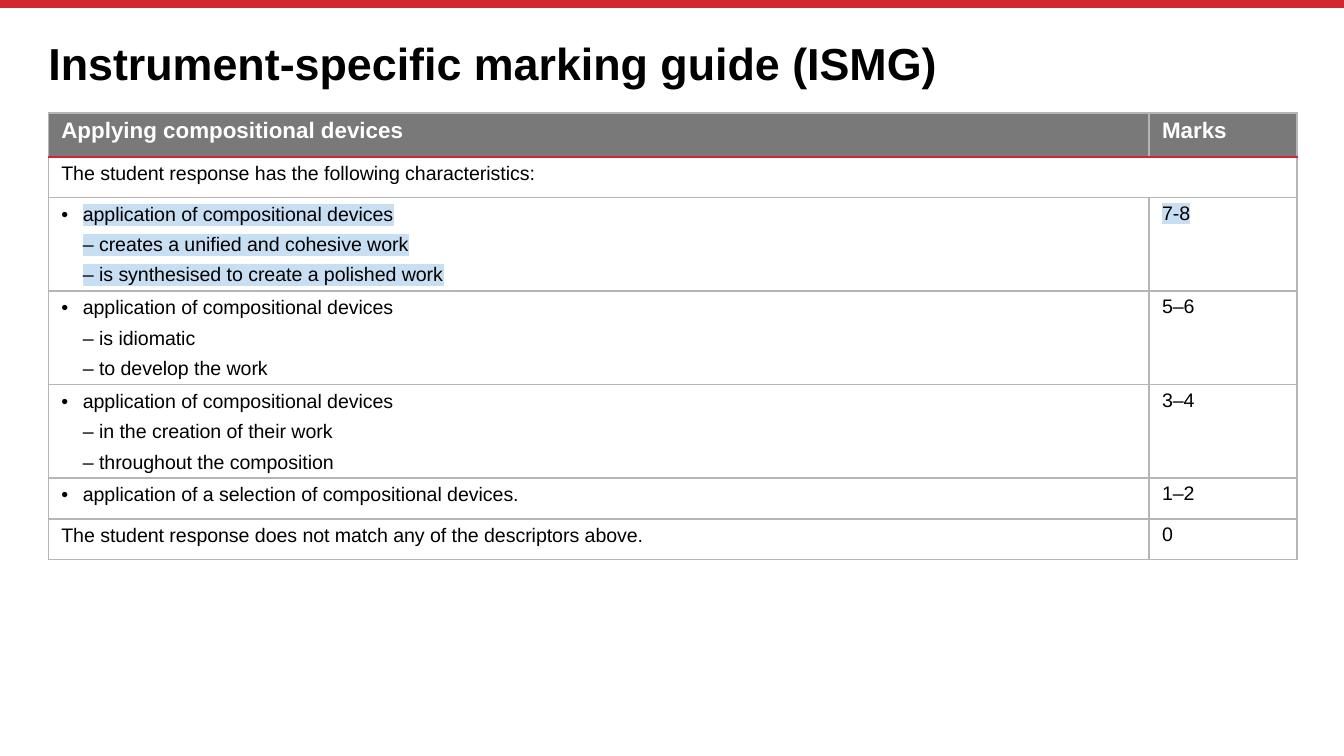
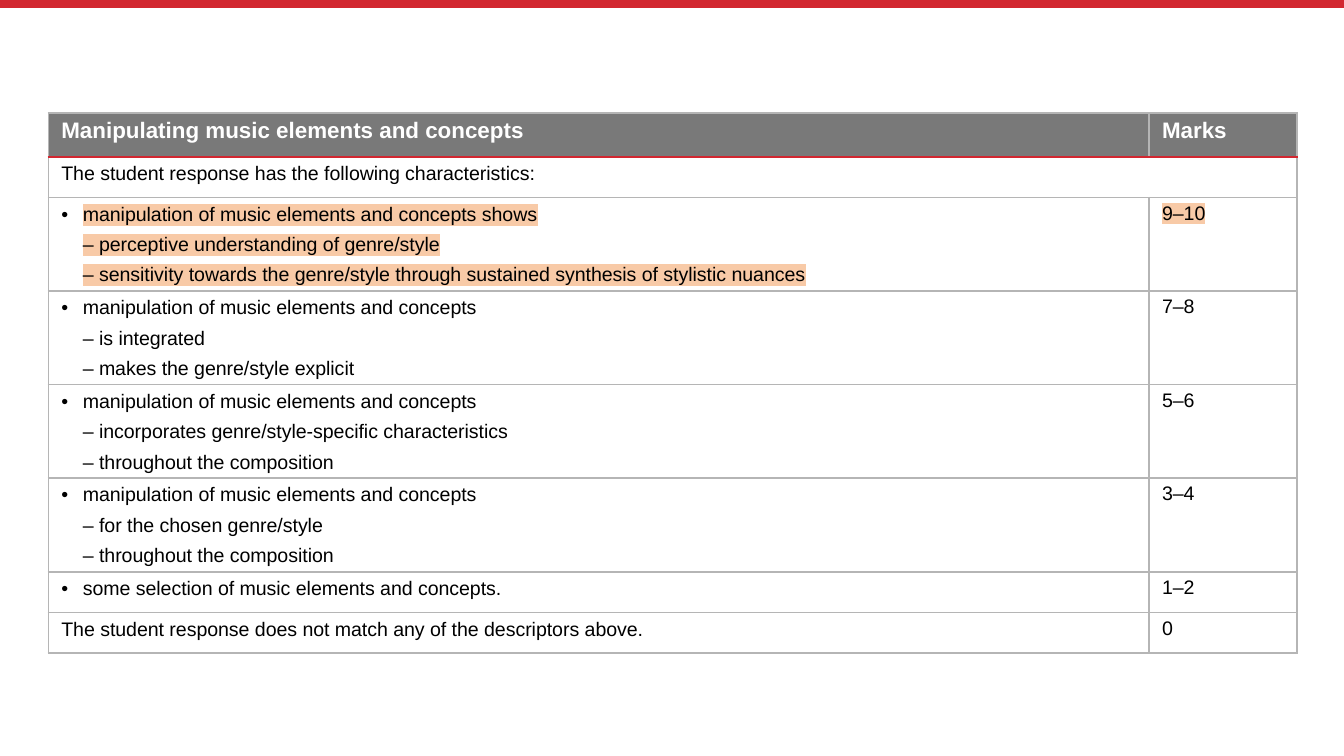
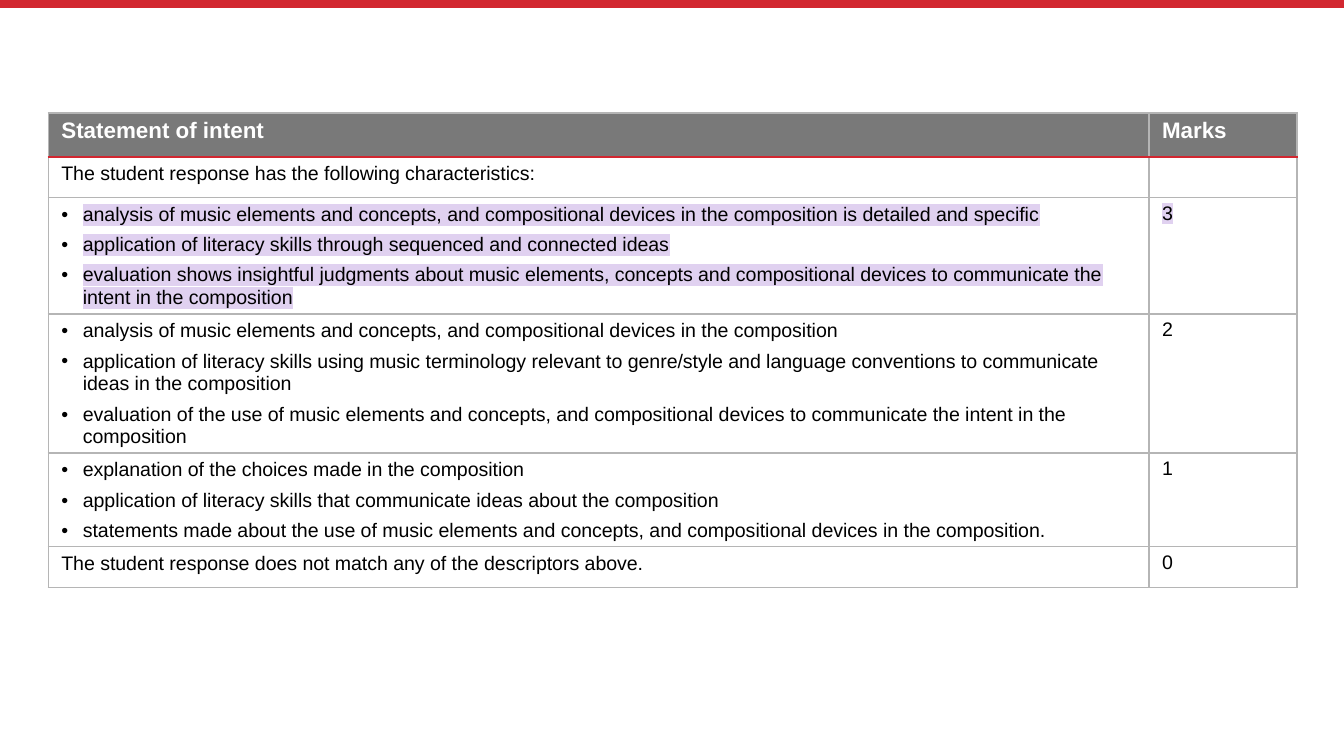
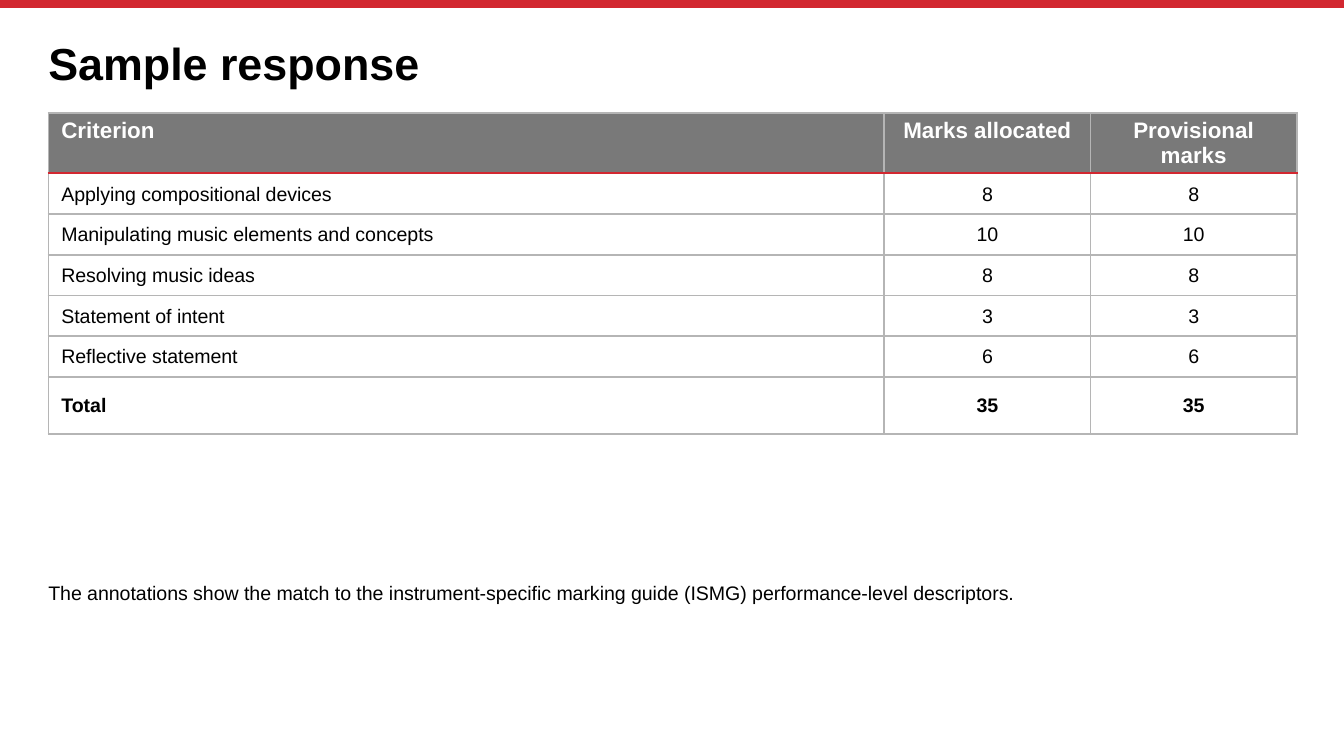
import pptx
import pptx.dml.color
import pptx.enum.shapes
import pptx.enum.text
import pptx.oxml.ns
import pptx.util
from lxml import etree

Pt = pptx.util.Pt
Inches = pptx.util.Inches
RGBColor = pptx.dml.color.RGBColor
Align = pptx.enum.text.PP_ALIGN
Anchor = pptx.enum.text.MSO_ANCHOR
qn = pptx.oxml.ns.qn

RED = RGBColor(0xD2, 0x27, 0x30)
HEADER_GREY = RGBColor(0x79, 0x79, 0x79)
RULE_GREY = RGBColor(0xB5, 0xB5, 0xB5)
BLACK = RGBColor(0, 0, 0)
WHITE = RGBColor(0xFF, 0xFF, 0xFF)
PALE_BLUE = RGBColor(0xC8, 0xDE, 0xF2)
PALE_ORANGE = RGBColor(0xF8, 0xCA, 0xA7)
PALE_PURPLE = RGBColor(0xE0, 0xD1, 0xF0)

FONT = "Arial"
GRID = 100
LEFT, WIDTH = 3.6, 92.9
TITLE_TOP, TITLE_HEIGHT = 5.3, 6.9
TABLE_TOP = 14.95
HEADER_ROW, BODY_ROW, TOTAL_ROW = 5.8, 5.39, 7.54
GUIDE_COLUMNS = (81.9, 11)
SUMMARY_COLUMNS = (62.2, 15.35, 15.35)
HANG = Inches(0.16)
TITLE_ONLY, TITLE_AND_BODY, BLANK = 5, 1, 6

CHARACTERISTICS = "The student response has the following characteristics:"
NO_MATCH = "The student response does not match any of the descriptors above."


def add_color(parent, color):
    etree.SubElement(parent, qn("a:srgbClr"), val=str(color))


def write(paragraph, text, size=10.5, color=BLACK, bold=False, align=Align.LEFT,
          leading=None, before=0, after=0, indent=0, hanging=0, bullet=None,
          highlight=None):
    paragraph.alignment = align
    paragraph.space_before, paragraph.space_after = Pt(before), Pt(after)
    if leading:
        paragraph.line_spacing = leading
    props = paragraph._p.get_or_add_pPr()
    props.set("marL", str(indent))
    props.set("indent", str(-hanging))
    if bullet:
        etree.SubElement(props, qn("a:buFont"), typeface=FONT)
        etree.SubElement(props, qn("a:buChar"), char=bullet)
    else:
        etree.SubElement(props, qn("a:buNone"))
    if not text:
        etree.SubElement(paragraph._p, qn("a:endParaRPr"), sz=str(int(size * 100)))
        return
    run = paragraph.add_run()
    run.text = text
    run.font.size, run.font.bold, run.font.name = Pt(size), bold, FONT
    run.font.color.rgb = color
    if highlight:
        marker = etree.Element(qn("a:highlight"))
        add_color(marker, highlight)
        run.font._element.find(qn("a:latin")).addprevious(marker)


class Deck:
    def __init__(self):
        self.prs = pptx.Presentation()
        self.prs.slide_width = Inches(10)
        self.prs.slide_height = self.prs.slide_width * 9 // 16
        self.slide = None

    def x(self, columns):
        return int(self.prs.slide_width * columns / GRID)

    def y(self, rows):
        return int(self.prs.slide_height * rows / GRID)

    def new_slide(self, layout):
        first = self.slide is None
        self.slide = self.prs.slides.add_slide(self.prs.slide_layouts[layout])
        if first:
            self.top_band()

    def top_band(self):
        band = self.slide.shapes.add_connector(
            pptx.enum.shapes.MSO_CONNECTOR.STRAIGHT,
            0, self.y(0.53), self.x(GRID), self.y(0.53))
        band.line.color.rgb, band.line.width = RED, Pt(4.2)
        etree.SubElement(band.element.spPr, qn("a:effectLst"))
        band.element.nvCxnSpPr.cNvPr.set("id", "100")
        self.prs.slide_master.element.cSld.spTree.append(band.element)

    def fill_placeholder(self, holder, text, top, height, anchor, **style):
        holder.left, holder.top = self.x(LEFT), self.y(top)
        holder.width, holder.height = self.x(WIDTH), self.y(height)
        frame = holder.text_frame
        frame.margin_left = frame.margin_right = 0
        frame.margin_top = frame.margin_bottom = 0
        frame.word_wrap = True
        frame.auto_size = pptx.enum.text.MSO_AUTO_SIZE.NONE
        frame.vertical_anchor = anchor
        write(frame.paragraphs[0], text, **style)

    def title(self, text):
        self.fill_placeholder(self.slide.shapes.title, text, TITLE_TOP, TITLE_HEIGHT,
                              Anchor.MIDDLE, size=24, bold=True, leading=0.9)

    def body(self, text, top, height):
        self.fill_placeholder(self.slide.placeholders[1], text, top, height, Anchor.TOP)

    def table(self, columns, heights):
        grid = self.slide.shapes.add_table(
            len(heights), len(columns), self.x(LEFT), self.y(TABLE_TOP),
            self.x(sum(columns)), self.y(sum(heights))).table
        grid.first_row = grid.horz_banding = False
        for column, width in zip(grid.columns, columns):
            column.width = self.x(width)
        for row, height in zip(grid.rows, heights):
            row.height = self.y(height)
        for r in range(len(heights)):
            for c in range(len(columns)):
                self.dress_cell(grid.cell(r, c), r)
        return grid

    def dress_cell(self, cell, r):
        cell.margin_left = cell.margin_right = Pt(7)
        cell.margin_top = cell.margin_bottom = Pt(2.7)
        for side in "LRTB":
            accent = (r, side) in ((0, "B"), (1, "T"))
            edge = etree.SubElement(cell._tc.get_or_add_tcPr(), qn(f"a:ln{side}"),
                                    w=str(Pt(1.5 if accent else 1)))
            add_color(etree.SubElement(edge, qn("a:solidFill")),
                      RED if accent else RULE_GREY)
        if r == 0:
            cell.fill.solid()
            cell.fill.fore_color.rgb = HEADER_GREY
        else:
            cell.fill.background()

    def header(self, grid, labels, align=Align.LEFT):
        for c, label in enumerate(labels):
            write(grid.cell(0, c).text_frame.paragraphs[0], label, size=12,
                  color=WHITE, bold=True, align=align if c else Align.LEFT)

    def descriptors(self, cell, lines, highlight):
        frame = cell.text_frame
        for i, line in enumerate(lines):
            paragraph = frame.add_paragraph() if i else frame.paragraphs[0]
            bulleted = line.startswith("• ")
            write(paragraph, line.removeprefix("• "), leading=1.05,
                  before=2 if i else 0, after=2,
                  indent=HANG if bulleted or line.startswith("– ") else 0,
                  hanging=HANG if bulleted else 0,
                  bullet="•" if bulleted else None, highlight=highlight)

    def marking_guide(self, criterion, levels, highlight, merge_intro=True):
        rows = [([CHARACTERISTICS], ""), *levels, ([NO_MATCH], "0")]
        grid = self.table(GUIDE_COLUMNS, [HEADER_ROW] + [BODY_ROW] * len(rows))
        self.header(grid, (criterion, "Marks"))
        for r, (lines, marks) in enumerate(rows, 1):
            shade = highlight if r == 2 else None
            self.descriptors(grid.cell(r, 0), lines, shade)
            write(grid.cell(r, 1).text_frame.paragraphs[0], marks, highlight=shade)
        if merge_intro:
            grid.cell(1, 0).merge(grid.cell(1, 1))

    def marks_summary(self, labels, results):
        total = sum(mark for _, mark in results)
        rows = [*results, ("Total", total)]
        grid = self.table(SUMMARY_COLUMNS,
                          [HEADER_ROW] + [BODY_ROW] * len(results) + [TOTAL_ROW])
        self.header(grid, labels, Align.CENTER)
        for r, (criterion, mark) in enumerate(rows, 1):
            for c, text in enumerate((criterion, str(mark), str(mark))):
                cell = grid.cell(r, c)
                cell.vertical_anchor = Anchor.MIDDLE
                write(cell.text_frame.paragraphs[0], text, bold=r == len(rows),
                      align=Align.CENTER if c else Align.LEFT, leading=1.05, after=2)


DEVICES = "• application of compositional devices"
DEVICE_LEVELS = [
    ([DEVICES, "– creates a unified and cohesive work",
      "– is synthesised to create a polished work"], "7-8"),
    ([DEVICES, "– is idiomatic", "– to develop the work"], "5–6"),
    ([DEVICES, "– in the creation of their work", "– throughout the composition"], "3–4"),
    (["• application of a selection of compositional devices."], "1–2"),
]

ELEMENTS = "• manipulation of music elements and concepts"
ELEMENT_LEVELS = [
    ([ELEMENTS + " shows", "– perceptive understanding of genre/style",
      "– sensitivity towards the genre/style through sustained synthesis of "
      "stylistic nuances"], "9–10"),
    ([ELEMENTS, "– is integrated", "– makes the genre/style explicit"], "7–8"),
    ([ELEMENTS, "– incorporates genre/style-specific characteristics",
      "– throughout the composition"], "5–6"),
    ([ELEMENTS, "– for the chosen genre/style", "– throughout the composition"], "3–4"),
    (["• some selection of music elements and concepts."], "1–2"),
]

ANALYSIS = ("• analysis of music elements and concepts, and compositional devices "
            "in the composition")
INTENT_LEVELS = [
    ([ANALYSIS + " is detailed and specific",
      "• application of literacy skills through sequenced and connected ideas",
      "• evaluation shows insightful judgments about music elements, concepts and "
      "compositional devices to communicate the intent in the composition"], "3"),
    ([ANALYSIS,
      "• application of literacy skills using music terminology relevant to "
      "genre/style and language conventions to communicate ideas in the composition",
      "• evaluation of the use of music elements and concepts, and compositional "
      "devices to communicate the intent in the composition"], "2"),
    (["• explanation of the choices made in the composition",
      "• application of literacy skills that communicate ideas about the composition",
      "• statements made about the use of music elements and concepts, and "
      "compositional devices in the composition."], "1"),
]

RESULTS = [
    ("Applying compositional devices", 8),
    ("Manipulating music elements and concepts", 10),
    ("Resolving music ideas", 8),
    ("Statement of intent", 3),
    ("Reflective statement", 6),
]


def main():
    deck = Deck()

    deck.new_slide(TITLE_ONLY)
    deck.title("Instrument-specific marking guide (ISMG)")
    deck.marking_guide("Applying compositional devices", DEVICE_LEVELS, PALE_BLUE)

    deck.new_slide(BLANK)
    deck.marking_guide("Manipulating music elements and concepts", ELEMENT_LEVELS,
                       PALE_ORANGE)

    deck.new_slide(BLANK)
    deck.marking_guide("Statement of intent", INTENT_LEVELS, PALE_PURPLE,
                       merge_intro=False)

    deck.new_slide(TITLE_AND_BODY)
    deck.title("Sample response")
    deck.body("The annotations show the match to the instrument-specific marking guide "
              "(ISMG) performance-level descriptors.", 76.9, 5.3)
    deck.marks_summary(("Criterion", "Marks allocated", "Provisional marks"), RESULTS)

    deck.prs.save("out.pptx")


if __name__ == "__main__":
    main()
